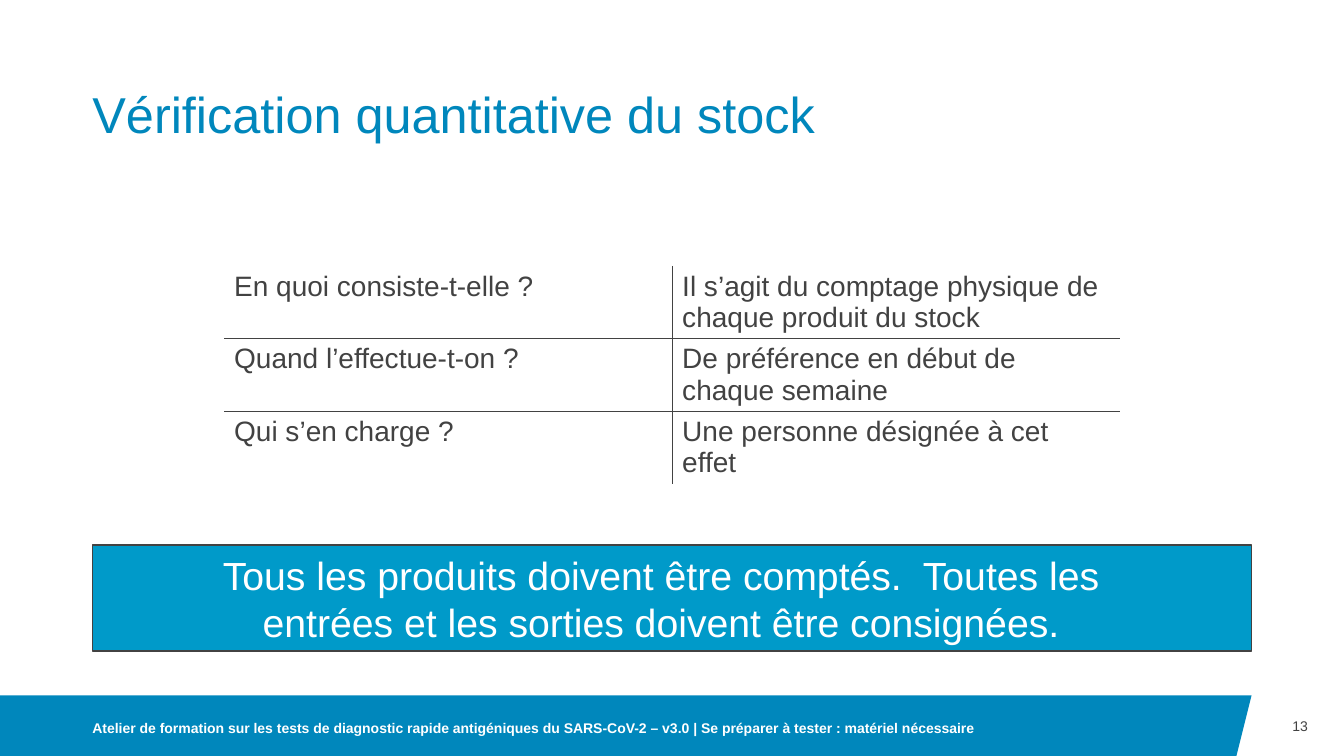
from dataclasses import dataclass

from lxml.etree import SubElement
from pptx import Presentation
from pptx.dml.color import RGBColor
from pptx.enum.shapes import MSO_SHAPE
from pptx.enum.text import MSO_ANCHOR as Anchor, MSO_AUTO_SIZE as AutoSize, PP_ALIGN as Align
from pptx.oxml.ns import qn
from pptx.shapes.base import BaseShape
from pptx.slide import Slide
from pptx.table import Table, _Cell as Cell
from pptx.text.text import TextFrame
from pptx.util import Inches, Pt

SLIDE_WIDTH, SLIDE_HEIGHT = Inches(13.33), Inches(7.5)
GRID_COLUMNS, GRID_ROWS = 160, 90


@dataclass(frozen=True)
class Theme:
    font: str = "Arial"
    footer_blue: str = "0087BC"
    banner_blue: str = "009AC9"
    ink: str = "424242"
    white: str = "FFFFFF"
    title_size: int = 36
    banner_size: int = 28
    table_size: int = 20
    footer_size: int = 10
    line_width: int = 1


@dataclass(frozen=True)
class Area:
    column: float
    row: float
    columns: float
    rows: float

    def box(self) -> tuple[int, int, int, int]:
        return (across(self.column), down(self.row), across(self.columns), down(self.rows))


@dataclass(frozen=True)
class TextStyle:
    size: int
    color: str
    bold: bool = False
    align: Align = Align.LEFT
    anchor: Anchor = Anchor.MIDDLE
    inset: float = 0


@dataclass(frozen=True)
class Label:
    text: str
    area: Area
    style: TextStyle


@dataclass(frozen=True)
class Question:
    question: str
    answer: str


THEME = Theme()
TITLE = Label(
    "Vérification quantitative du stock",
    Area(11, 4.8, 138, 12.4),
    TextStyle(THEME.title_size, THEME.footer_blue, anchor=Anchor.BOTTOM),
)
FOOTER_LABELS = (
    Label("13", Area(149, 82.8, 6.7, 7.2),
          TextStyle(THEME.footer_size, THEME.ink, align=Align.RIGHT)),
    Label(
        "Atelier de formation sur les tests de diagnostic rapide antigéniques du SARS-CoV-2"
        " – v3.0 | Se préparer à tester : matériel nécessaire",
        Area(11, 83.4, 111.9, 6.6),
        TextStyle(THEME.footer_size, THEME.white, bold=True),
    ),
)
BANNER = Label(
    "Tous les produits doivent être comptés.  Toutes les\n"
    "entrées et les sorties doivent être consignées.",
    Area(11, 64.9, 138, 12.6),
    TextStyle(THEME.banner_size, THEME.white, align=Align.CENTER, inset=0.06),
)
BANNER_FIRST_LINE_INDENT = Inches(0.22)
FOOTER_OUTLINE = ((0, 82.8), (149, 82.8), (147.2, 90), (0, 90))
TABLE_AREA = Area(26.67, 31.65, 106.7, 25.95)
QUESTIONS = (
    Question("En quoi consiste-t-elle ?",
             "Il s’agit du comptage physique de chaque produit du stock"),
    Question("Quand l’effectue-t-on ?", "De préférence en début de chaque semaine"),
    Question("Qui s’en charge ?", "Une personne désignée à cet effet"),
)


def across(columns: float) -> int:
    return round(SLIDE_WIDTH * columns / GRID_COLUMNS)


def down(rows: float) -> int:
    return round(SLIDE_HEIGHT * rows / GRID_ROWS)


def color(value: str) -> RGBColor:
    return RGBColor.from_string(value)


def format_runs(frame: TextFrame, style: TextStyle) -> None:
    for paragraph in frame.paragraphs:
        paragraph.alignment = style.align
        for run in paragraph.runs:
            run.font.name = THEME.font
            run.font.size = Pt(style.size)
            run.font.bold = style.bold
            run.font.color.rgb = color(style.color)


def write_label(shape: BaseShape, label: Label) -> None:
    frame = shape.text_frame
    frame.text = label.text
    frame.word_wrap = True
    frame.auto_size = AutoSize.NONE
    frame.vertical_anchor = label.style.anchor
    inset = Inches(label.style.inset)
    frame.margin_left = frame.margin_right = inset
    frame.margin_top = frame.margin_bottom = inset
    format_runs(frame, label.style)


def draw_title(slide: Slide) -> None:
    title = slide.shapes.title
    title.left, title.top, title.width, title.height = TITLE.area.box()
    write_label(title, TITLE)
    title.text_frame.paragraphs[0].line_spacing = 0.9


def draw_footer(slide: Slide) -> None:
    start, *corners = [(across(column), down(row)) for column, row in FOOTER_OUTLINE]
    builder = slide.shapes.build_freeform(*start)
    builder.add_line_segments(corners, close=True)
    band = builder.convert_to_shape()
    band.shadow.inherit = False
    band.fill.solid()
    band.fill.fore_color.rgb = color(THEME.footer_blue)
    band.line.fill.background()
    for label in FOOTER_LABELS:
        write_label(slide.shapes.add_textbox(*label.area.box()), label)


def draw_banner(slide: Slide) -> None:
    banner = slide.shapes.add_shape(MSO_SHAPE.RECTANGLE, *BANNER.area.box())
    banner.shadow.inherit = False
    banner.fill.solid()
    banner.fill.fore_color.rgb = color(THEME.banner_blue)
    banner.line.color.rgb = color(THEME.ink)
    banner.line.width = Pt(THEME.line_width)
    write_label(banner, BANNER)
    properties = banner.text_frame.paragraphs[0]._p.get_or_add_pPr()
    properties.set("marR", str(BANNER_FIRST_LINE_INDENT))


def set_borders(cell: Cell, visible: dict[str, bool]) -> None:
    properties = cell._tc.get_or_add_tcPr()
    for side, shown in visible.items():
        line = SubElement(properties, qn(f"a:ln{side}"), w=str(Pt(THEME.line_width)))
        if shown:
            fill = SubElement(line, qn("a:solidFill"))
            SubElement(fill, qn("a:srgbClr"), val=THEME.ink)
        else:
            SubElement(line, qn("a:noFill"))


def fill_cell(table: Table, row: int, column: int, text: str) -> None:
    cell = table.cell(row, column)
    cell.text_frame.text = text
    format_runs(cell.text_frame, TextStyle(THEME.table_size, THEME.ink))
    set_borders(cell, {
        "L": column > 0,
        "R": column < len(table.columns) - 1,
        "T": row > 0,
        "B": row < len(table.rows) - 1,
    })
    cell.fill.background()


def draw_questions(slide: Slide) -> None:
    table = slide.shapes.add_table(len(QUESTIONS), 2, *TABLE_AREA.box()).table
    table.first_row = table.horz_banding = False
    for row, entry in enumerate(QUESTIONS):
        for column, text in enumerate((entry.question, entry.answer)):
            fill_cell(table, row, column, text)


def main() -> None:
    presentation = Presentation()
    presentation.slide_width, presentation.slide_height = SLIDE_WIDTH, SLIDE_HEIGHT
    slide = presentation.slides.add_slide(presentation.slide_layouts.get_by_name("Title Only"))
    draw_title(slide)
    draw_questions(slide)
    draw_banner(slide)
    draw_footer(slide)
    presentation.save("out.pptx")


if __name__ == "__main__":
    main()
